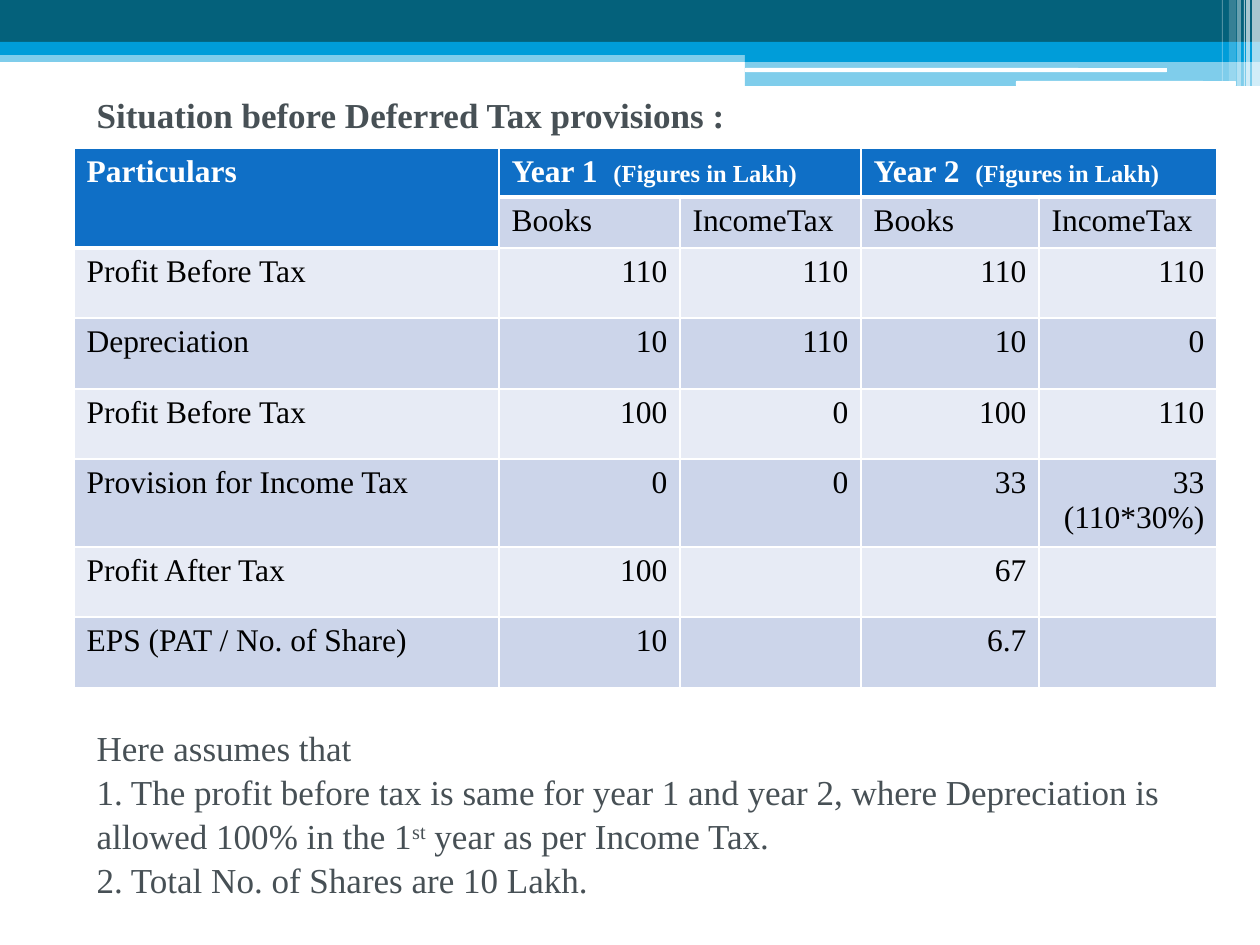
from lxml import etree
from pptx import Presentation
from pptx.dml.color import RGBColor
from pptx.enum.shapes import MSO_SHAPE
from pptx.enum.text import MSO_ANCHOR, MSO_AUTO_SIZE, PP_ALIGN
from pptx.oxml.ns import qn
from pptx.util import Emu, Pt

RECT, ROUND = MSO_SHAPE.RECTANGLE, MSO_SHAPE.ROUNDED_RECTANGLE
LEFT, RIGHT = PP_ALIGN.LEFT, PP_ALIGN.RIGHT
TOP, FIXED = MSO_ANCHOR.TOP, MSO_AUTO_SIZE.NONE

TEAL = RGBColor(0x04, 0x61, 0x7B)
SKY = RGBColor(0x00, 0x9D, 0xD9)
BLUE = RGBColor(0x0F, 0x6F, 0xC6)
PALE = RGBColor(0xE7, 0xEB, 0xF5)
MIST = RGBColor(0xCC, 0xD5, 0xEA)
GREY = RGBColor(0x47, 0x50, 0x55)
WHITE = RGBColor(0xFF, 0xFF, 0xFF)
BLACK = RGBColor(0, 0, 0)
FACE = "Times New Roman"

# left, top, width, height, colour, opacity in percent
BARS = [
    (0, 50, 1260, 12, SKY, 50),
    (0, 0, 1260, 42, TEAL, 100),
    (0, 42, 1260, 13, SKY, 100),
    (745, 49, 515, 13, SKY, 100),
    (745, 61, 515, 25, SKY, 50),
]
PILLS = [(745, 68, 422, 4), (1016, 81, 220, 5)]
# left, width, height, opacity in percent
STRIPES = [
    (1252, 8, 86, 65), (1246, 4, 86, 65), (1244, 1, 86, 60),
    (1237, 4, 86, 40), (1229, 7, 81, 20), (1222, 1, 81, 30),
]

HEIGHTS = [49, 51, 70, 71, 70, 88, 70, 71]
UNIT = "(Figures in Lakh)"
YEAR1 = [
    ["Particulars", ("Year 1  ", UNIT), ""],
    ["", "Books", "IncomeTax"],
    ["Profit Before Tax", "110", "110"],
    ["Depreciation", "10", "110"],
    ["Profit Before Tax", "100", "0"],
    ["Provision for Income Tax", "0", "0"],
    ["Profit After Tax", "100", ""],
    ["EPS (PAT / No. of Share)", "10", ""],
]
YEAR2 = [
    [("Year 2  ", UNIT), ""],
    ["Books", "IncomeTax"],
    ["110", "110"],
    ["10", "0"],
    ["100", "110"],
    ["33", "33\n(110*30%)"],
    ["67", ""],
    ["6.7", ""],
]
NOTES = [
    ["Here assumes that"],
    ["1. The profit before tax is same for year 1 and year 2, where "
     "Depreciation is allowed 100% in the 1", "st",
     " year as per Income Tax."],
    ["2. Total No. of Shares are 10 Lakh."],
]


def px(num):
    return Emu(round(num * 914400 / 126))


class Page:
    """Holds the current slide and draws styled elements on it."""

    def __init__(self, slide):
        self.slide = slide

    def font(self, para, size, color, bold=False):
        font = para.font
        font.name, font.size, font.bold = FACE, Pt(size), bold
        font.color.rgb = color

    def bar(self, x, y, w, h, color, alpha=100, kind=RECT):
        bar = self.slide.shapes.add_shape(kind, px(x), px(y), px(w), px(h))
        bar.shadow.inherit = False
        bar.line.fill.background()
        bar.fill.solid()
        bar.fill.fore_color.rgb = color
        if alpha < 100:
            tint = bar.fill._xPr.find(".//" + qn("a:srgbClr"))
            etree.SubElement(tint, qn("a:alpha"), val=str(alpha * 1000))

    def text(self, holder, box, lines, bold=False, space=1.0):
        """Fill a placeholder; the second run of a line is superscript."""
        holder.left, holder.top, holder.width, holder.height = map(px, box)
        frame = holder.text_frame
        frame.word_wrap, frame.auto_size = True, FIXED
        frame.vertical_anchor = TOP
        for num, line in enumerate(lines):
            para = frame.add_paragraph() if num else frame.paragraphs[0]
            for spot, part in enumerate(line):
                run = para.add_run()
                run.text = part
                if spot == 1:
                    run._r.get_or_add_rPr().set("baseline", "30000")
            para.alignment, para.line_spacing = LEFT, space
            para.space_before = Pt(0)
            self.font(para, 20, GREY, bold)
            props = para._p.get_or_add_pPr()
            props.set("marL", "0")
            props.set("indent", "0")
            etree.SubElement(props, qn("a:buNone"))
            props.append(props.find(qn("a:defRPr")))

    def edges(self, cell, top, base):
        props = cell._tc.get_or_add_tcPr()
        for side, width in zip("LRTB", (1, 1, top, base)):
            line = etree.SubElement(props, qn("a:ln" + side),
                                    w=str(Pt(width)))
            fill = etree.SubElement(line, qn("a:solidFill"))
            etree.SubElement(fill, qn("a:srgbClr"), val=str(WHITE))

    def cell(self, cell, value, head, color, align):
        cell.fill.solid()
        cell.fill.fore_color.rgb = color
        frame = cell.text_frame
        if isinstance(value, tuple):
            for part in value:
                run = frame.paragraphs[0].add_run()
                run.text = part
            run.font.size = Pt(14)
        else:
            frame.text = value
        for para in frame.paragraphs:
            para.alignment = align
            self.font(para, 18, WHITE if head else BLACK, head)

    def table(self, x, y, widths, rows, label):
        """Draw a year table; label tells if column 0 names the rows."""
        shape = self.slide.shapes.add_table(
            len(rows), len(widths), px(x), px(y),
            px(sum(widths)), px(sum(HEIGHTS)))
        grid = shape.table
        for col, width in zip(grid.columns, widths):
            col.width = px(width)
        for row, height in zip(grid.rows, HEIGHTS):
            row.height = px(height)
        for r, row in enumerate(rows):
            for c, value in enumerate(row):
                name = label and c == 0
                head = r == 0 or (name and r == 1)
                cell = grid.cell(r, c)
                self.edges(cell, 3 if r == 1 else 1, 3 if head else 1)
                color = BLUE if head else MIST if r % 2 else PALE
                align = LEFT if name or r < 2 else RIGHT
                self.cell(cell, value, head, color, align)
        first = int(label)
        grid.cell(0, first).merge(grid.cell(0, first + 1))
        if label:
            grid.cell(0, 0).merge(grid.cell(1, 0))


def main():
    deck = Presentation()
    deck.slide_width, deck.slide_height = px(1260), px(945)
    slide = deck.slides.add_slide(deck.slide_layouts[1])
    page = Page(slide)
    for bar in BARS:
        page.bar(*bar)
    for pill in PILLS:
        page.bar(*pill, WHITE, kind=ROUND)
    for x, w, h, alpha in STRIPES:
        page.bar(x, 0, w, h, WHITE, alpha)
    title, body = slide.placeholders
    page.text(title, (84, 87, 1102, 56),
              [["Situation before Deferred Tax provisions :"]], bold=True)
    page.text(body, (84, 718, 1102, 190), NOTES, space=1.05)
    page.table(74, 148, [425, 181, 181], YEAR1, True)
    page.table(861, 148, [178, 178], YEAR2, False)
    deck.save("out.pptx")


if __name__ == "__main__":
    main()
